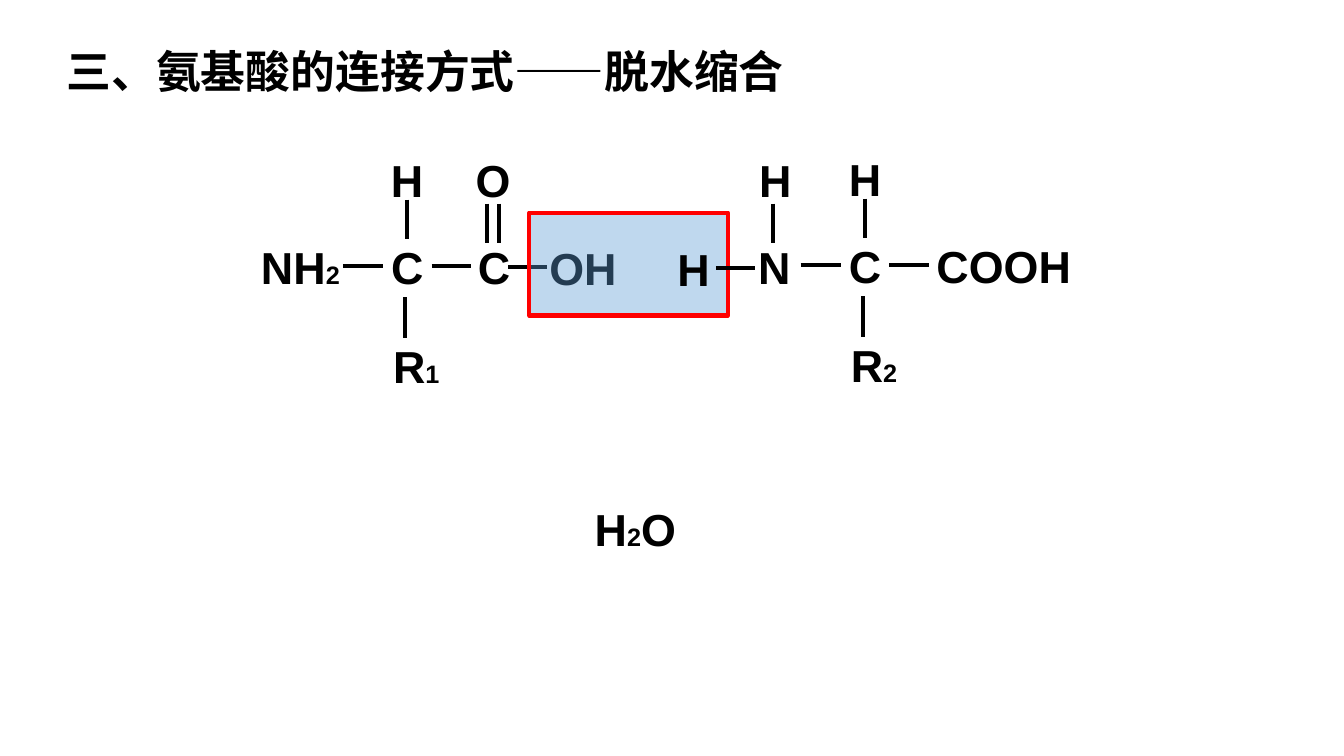
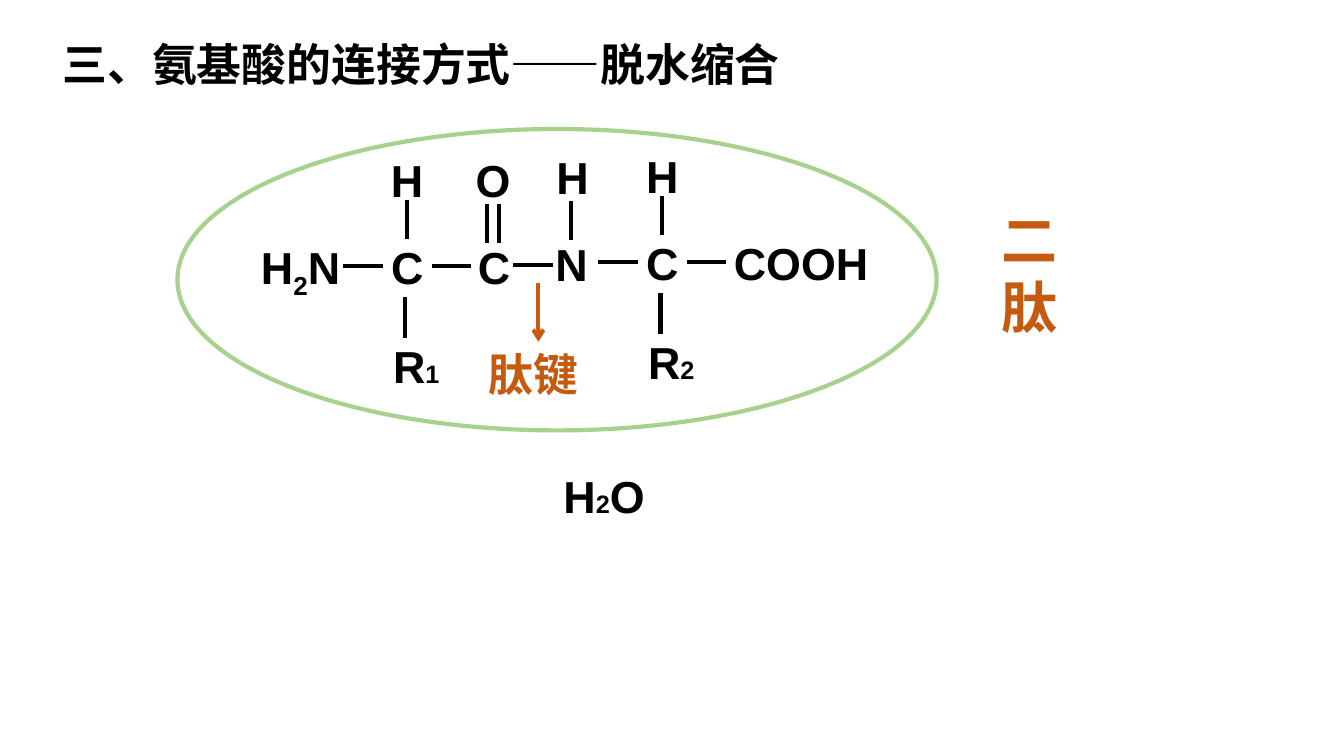
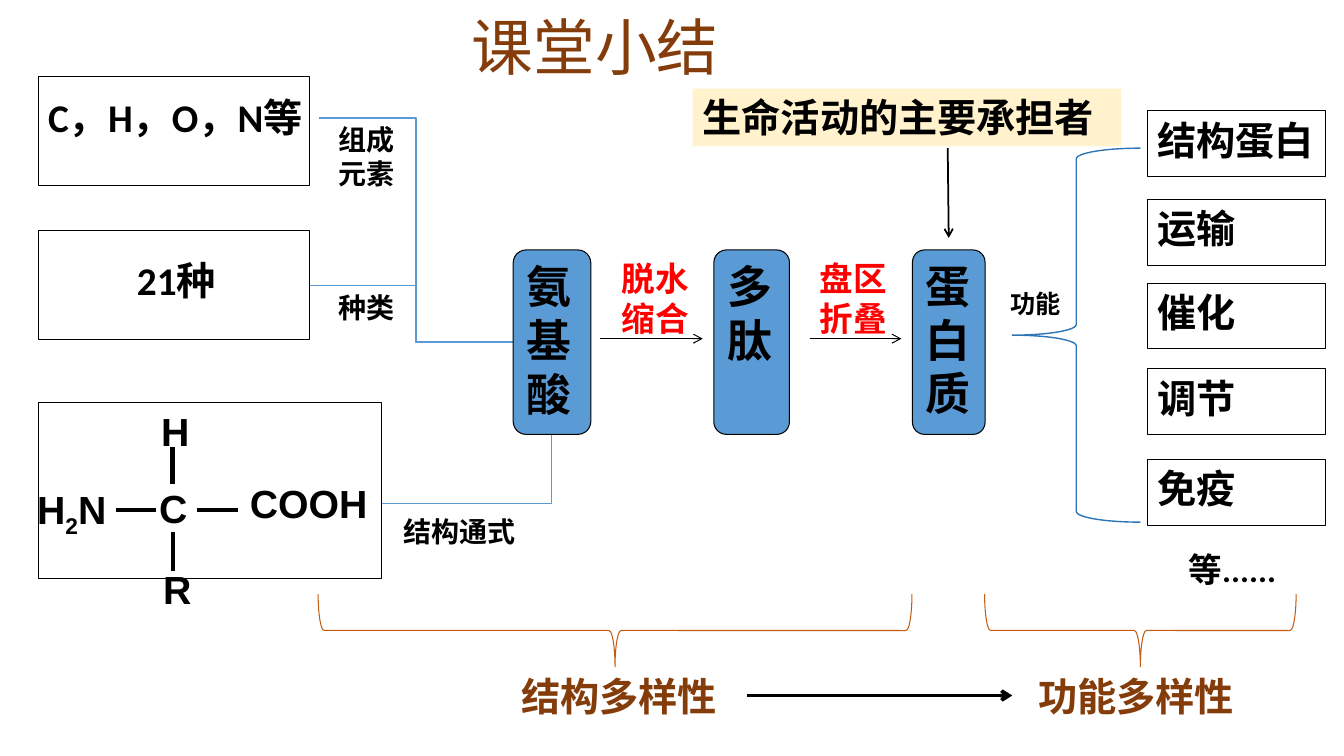
from lxml.etree import SubElement
from pptx import Presentation
from pptx.dml.color import RGBColor
from pptx.enum.shapes import MSO_CONNECTOR, MSO_SHAPE
from pptx.enum.text import MSO_ANCHOR, MSO_AUTO_SIZE, PP_ALIGN
from pptx.oxml.ns import qn
from pptx.util import Inches, Pt

BLACK = RGBColor(0x00, 0x00, 0x00)
WHITE = RGBColor(0xFF, 0xFF, 0xFF)
RED = RGBColor(0xFF, 0x00, 0x00)
BLUE = RGBColor(0x5B, 0x9B, 0xD5)
DEEP_BLUE = RGBColor(0x2E, 0x75, 0xB6)
GREEN = RGBColor(0xA9, 0xD1, 0x8E)
ORANGE = RGBColor(0xC5, 0x5A, 0x11)
BROWN = RGBColor(0x84, 0x3C, 0x0B)
CREAM = RGBColor(0xFF, 0xF2, 0xCC)

CHINESE_FONT = "Noto Sans CJK SC"
FRAME_FORMAT = {
    "word_wrap": True,
    "auto_size": MSO_AUTO_SIZE.NONE,
    "vertical_anchor": MSO_ANCHOR.TOP,
    "margin_left": Inches(0.1),
    "margin_right": Inches(0.1),
    "margin_top": Inches(0.05),
    "margin_bottom": Inches(0.05),
}
FORMULA = {"name": "Arial", "size": Pt(32), "bold": True}
SMALL_FORMULA = {**FORMULA, "size": Pt(28)}
NOTE = {"name": "Calibri", "size": Pt(20), "bold": True}
FACT = {**NOTE, "size": Pt(28)}
STEP = {**NOTE, "size": Pt(24)}
DIVERSITY = {**FACT, "name": "Times New Roman"}
PEPTIDE_NAME = {"name": CHINESE_FONT, "size": Pt(40), "bold": True}
SUMMARY_TITLE = {"name": CHINESE_FONT, "size": Pt(44), "bold": False}
SUBSCRIPT = {"size": Pt(18)}

CONDENSATION_TITLE = "三、氨基酸的连接方式——脱水缩合"
LARGE_CARBON = {
    "format": FORMULA,
    "height": 0.64,
    "hydrogen": (0, -0.86),
    "side_chain": (0.02, 0.98),
    "bonds": [(-0.38, 0.31, 0.02, 0.31), (0.5, 0.31, 0.89, 0.31),
              (0.24, 0.62, 0.24, 1.02), (0.26, -0.35, 0.26, 0.04)],
}
SMALL_CARBON = {
    "format": SMALL_FORMULA,
    "height": 0.57,
    "hydrogen": (0.02, -0.77),
    "side_chain": (0.04, 0.8),
    "bonds": [(-0.33, 0.3, 0.07, 0.3), (0.47, 0.3, 0.88, 0.3),
              (0.24, 0.52, 0.24, 0.9), (0.23, -0.33, 0.23, 0.04)],
}


def apply_format(target, values):
    for name, value in values.items():
        setattr(target, name, value)


def write(frame, paragraphs, style, color=BLACK):
    apply_format(frame, FRAME_FORMAT)
    for index, pieces in enumerate(paragraphs):
        paragraph = frame.add_paragraph() if index else frame.paragraphs[0]
        paragraph.alignment = PP_ALIGN.LEFT
        for wording, extra in pieces:
            run = paragraph.add_run()
            run.text = wording
            apply_format(run.font, {**style, **extra})
            run.font.color.rgb = color
            properties = run.font._element
            SubElement(properties, qn("a:ea")).set("typeface", CHINESE_FONT)


def label(slide, box, pieces, style=FORMULA, color=BLACK):
    if isinstance(pieces, str):
        pieces = [(pieces, {})]
    holder = slide.shapes.add_textbox(*map(Inches, box))
    write(holder.text_frame, [pieces], style, color)
    return holder


def lower(holder, run_index):
    font = holder.text_frame.paragraphs[0].runs[run_index].font
    font._element.set("baseline", "-25000")


def title(slide, box, wording, style, color=BLACK):
    heading = slide.shapes.title
    apply_format(heading, dict(zip(("left", "top", "width", "height"), map(Inches, box))))
    write(heading.text_frame, [[(wording, {})]], style, color)


def block(slide, kind, box, fill=None, outline=None, weight=0.75, rotation=0):
    shape = slide.shapes.add_shape(kind, *map(Inches, box))
    shape.shadow.inherit = False
    shape.rotation = rotation
    if fill is None:
        shape.fill.background()
    else:
        shape.fill.solid()
        shape.fill.fore_color.rgb = fill
    if outline is None:
        shape.line.fill.background()
    else:
        shape.line.color.rgb = outline
        shape.line.width = Pt(weight)
    return shape


def line(slide, ends, color=BLACK, weight=3, arrow=False, kind=MSO_CONNECTOR.STRAIGHT):
    connector = slide.shapes.add_connector(kind, *map(Inches, ends))
    connector.line.color.rgb = color
    connector.line.width = Pt(weight)
    properties = connector.element.spPr
    if arrow:
        SubElement(properties.find(qn("a:ln")), qn("a:tailEnd")).set("type", "arrow")
    SubElement(properties, qn("a:effectLst"))
    return connector


def corner_line(slide, box, rotation, color, weight):
    x, y, width, height = box
    corner = line(slide, (x, y, x + width, y + height), color, weight, kind=MSO_CONNECTOR.ELBOW)
    properties = corner.element.spPr
    properties.find(qn("a:prstGeom")).set("prst", "bentConnector2")
    properties.find(qn("a:xfrm")).set("rot", str(rotation * 60000))


def alpha_carbon(slide, x, y, side_chain, layout):
    style, height = layout["format"], layout["height"]
    label(slide, (x, y, 0.55, height), "C", style)
    for x1, y1, x2, y2 in layout["bonds"]:
        line(slide, (x + x1, y + y1, x + x2, y + y2))
    for (dx, dy), width, pieces in ((layout["hydrogen"], 0.63, "H"),
                                    (layout["side_chain"], 1, side_chain)):
        label(slide, (x + dx, y + dy, width, height), pieces, style)


def first_residue(slide, x, y):
    alpha_carbon(slide, x + 1.29, y + 0.86, [("R", {}), ("1", SUBSCRIPT)], LARGE_CARBON)
    label(slide, (x + 2.15, y + 0.86, 0.55, 0.64), "C")
    label(slide, (x + 2.13, y, 0.55, 0.64), "O")
    for bond_x in (x + 2.34, x + 2.46):
        line(slide, (bond_x, y + 0.55, bond_x, y + 0.94))


def second_residue(slide, x, y):
    alpha_carbon(slide, x + 1.22, y + 0.86, [("R", {}), ("2", SUBSCRIPT)], LARGE_CARBON)
    label(slide, (x + 2.09, y + 0.86, 1.57, 0.64), "COOH")
    label(slide, (x + 0.33, y + 0.01, 0.63, 0.64), "H")
    label(slide, (x + 0.32, y + 0.87, 0.63, 0.64), "N")
    line(slide, (x, y + 1.2, x + 0.39, y + 1.2))
    line(slide, (x + 0.57, y + 0.56, x + 0.57, y + 0.95))


def water(slide, x, y):
    label(slide, (x, y, 1.18, 0.64), [("H", {}), ("2", SUBSCRIPT), ("O", {})])


def amino_group(slide, box, style):
    lower(label(slide, box, [("H", {}), ("2", {}), ("N", {})], style), 1)


def condensation_slide(slide):
    title(slide, (0.56, 0.38, 8.33, 0.64), CONDENSATION_TITLE, FORMULA)
    first_residue(slide, 2.49, 1.47)
    label(slide, (2.49, 2.33, 1.18, 0.64), [("NH", {}), ("2", SUBSCRIPT)])
    label(slide, (5.35, 2.34, 1, 0.64), "OH")
    line(slide, (5.04, 2.65, 5.43, 2.65))
    leaving_water = block(slide, MSO_SHAPE.RECTANGLE, (5.25, 2.11, 1.97, 1.02), BLUE, RED, 3)
    tint = leaving_water.element.spPr.find(qn("a:solidFill"))[0]
    SubElement(tint, qn("a:alpha")).set("val", "39000")
    water(slide, 5.8, 4.93)
    second_residue(slide, 7.1, 1.46)
    label(slide, (6.62, 2.35, 0.63, 0.64), "H")


def dipeptide_slide(slide):
    title(slide, (0.52, 0.31, 8.33, 0.64), CONDENSATION_TITLE, FORMULA)
    first_residue(slide, 2.49, 1.47)
    amino_group(slide, (2.49, 2.33, 1.19, 0.64), FORMULA)
    second_residue(slide, 5.09, 1.43)
    water(slide, 5.49, 4.6)
    label(slide, (9.83, 1.99, 1.02, 1.45), "二肽", PEPTIDE_NAME, ORANGE)
    label(slide, (4.75, 3.39, 1.18, 0.64), "肽键", FORMULA, ORANGE)
    block(slide, MSO_SHAPE.OVAL, (1.76, 1.28, 7.53, 2.99), None, GREEN, 3)
    line(slide, (5.34, 2.81, 5.34, 3.39), ORANGE, 2.75, arrow=True)


def composition(slide, x, y):
    for top, width, height in ((0, 2.69, 1.08), (1.53, 2.69, 1.08), (3.23, 3.4, 1.75)):
        block(slide, MSO_SHAPE.RECTANGLE, (x, y + top, width, height), WHITE, BLACK)
    label(slide, (x, y + 0.12, 2.78, 0.57), "C，H，O，N等", FACT)
    label(slide, (x + 0.88, y + 1.73, 1.32, 0.57), "21种", FACT)
    elements = slide.shapes.add_textbox(*map(Inches, (x + 2.88, y + 0.41, 0.97, 0.77)))
    write(elements.text_frame, [[("组成", {})], [("元素", {})]], NOTE)
    label(slide, (x + 2.88, y + 2.07, 0.82, 0.44), "种类", NOTE)
    label(slide, (x + 3.52, y + 4.3, 1.46, 0.44), "结构通式", NOTE)
    alpha_carbon(slide, x + 1.1, y + 4, "R", SMALL_CARBON)
    amino_group(slide, (x - 0.11, y + 4.01, 1.21, 0.57), SMALL_FORMULA)
    label(slide, (x + 2, y + 3.95, 1.42, 0.57), "COOH", SMALL_FORMULA)
    line(slide, (x + 2.78, y + 0.41, x + 4.71, y + 2.64), BLUE, 1, kind=MSO_CONNECTOR.ELBOW)
    line(slide, (x + 2.7, y + 2.07, x + 4.8, y + 2.63), BLUE, 0.5, kind=MSO_CONNECTOR.ELBOW)
    corner_line(slide, (x + 3.91, y + 3.05, 0.68, 1.68), 90, BLUE, 0.5)


def synthesis(slide, x, y):
    for left, width, stage in ((0, 0.77, "氨基酸"), (1.99, 0.75, "多肽"), (3.96, 0.72, "蛋白质")):
        box = block(slide, MSO_SHAPE.ROUNDED_RECTANGLE, (x + left, y, width, 1.83), BLUE, BLACK)
        write(box.text_frame, [[(stage, {})]], FORMULA)
    for left, start, end, step in ((0.98, 0.86, 1.88, "脱水缩合"), (2.94, 2.94, 3.85, "盘区折叠")):
        line(slide, (x + start, y + 0.88, x + end, y + 0.88), BLACK, 0.75, arrow=True)
        label(slide, (x + left, y + 0.03, 0.89, 0.91), step, STEP, RED)
    role = block(slide, MSO_SHAPE.RECTANGLE, (x + 1.78, y - 1.6, 4.25, 0.57), CREAM)
    write(role.text_frame, [[("生命活动的主要承担者", {})]], FACT)
    line(slide, (x + 4.31, y - 1.01, x + 4.32, y - 0.12), BLACK, 1.25, arrow=True)


def functions(slide, x, y):
    block(slide, MSO_SHAPE.LEFT_BRACE, (x, y + 0.37, 1.27, 3.71), None, DEEP_BLUE, 1)
    label(slide, (x - 0.12, y + 1.71, 0.74, 0.4), "功能", {**NOTE, "size": Pt(18)})
    roles = {"结构蛋白": 0, "运输": 0.88, "催化": 1.71, "调节": 2.56, "免疫": 3.46}
    for role, top in roles.items():
        box = block(slide, MSO_SHAPE.RECTANGLE, (x + 1.34, y + top, 1.77, 0.65), WHITE, BLACK)
        write(box.text_frame, [[(role, {})]], SMALL_FORMULA)
    label(slide, (x + 1.65, y + 4.3, 1.46, 0.5), "等......", STEP)


def diversity(slide, x, y):
    braces = [(x + 2.59, y - 1.68, 0.72, 5.89), (x + 7.8, y - 0.28, 0.72, 3.09)]
    for box in braces:
        block(slide, MSO_SHAPE.RIGHT_BRACE, box, None, ORANGE, rotation=90)
    for left, width, kind in ((1.92, 3.85, "结构多样性"), (7.05, 2.23, "功能多样性")):
        label(slide, (x + left, y + 1.63, width, 0.57), kind, DIVERSITY, BROWN)
    line(slide, (x + 4.26, y + 1.91, x + 6.89, y + 1.91), BLACK, 2.5, arrow=True)


def summary_slide(slide):
    title(slide, (4.58, 0.04, 2.66, 0.84), "课堂小结", SUMMARY_TITLE, BROWN)
    composition(slide, 0.38, 0.76)
    synthesis(slide, 5.09, 2.48)
    functions(slide, 10.04, 1.1)
    diversity(slide, 3.15, 4.99)


def main():
    deck = Presentation()
    deck.slide_width = Inches(13.33)
    deck.slide_height = Inches(7.5)
    title_only = deck.slide_layouts[5]
    for build in (condensation_slide, dipeptide_slide, summary_slide):
        build(deck.slides.add_slide(title_only))
    deck.save("out.pptx")


if __name__ == "__main__":
    main()
